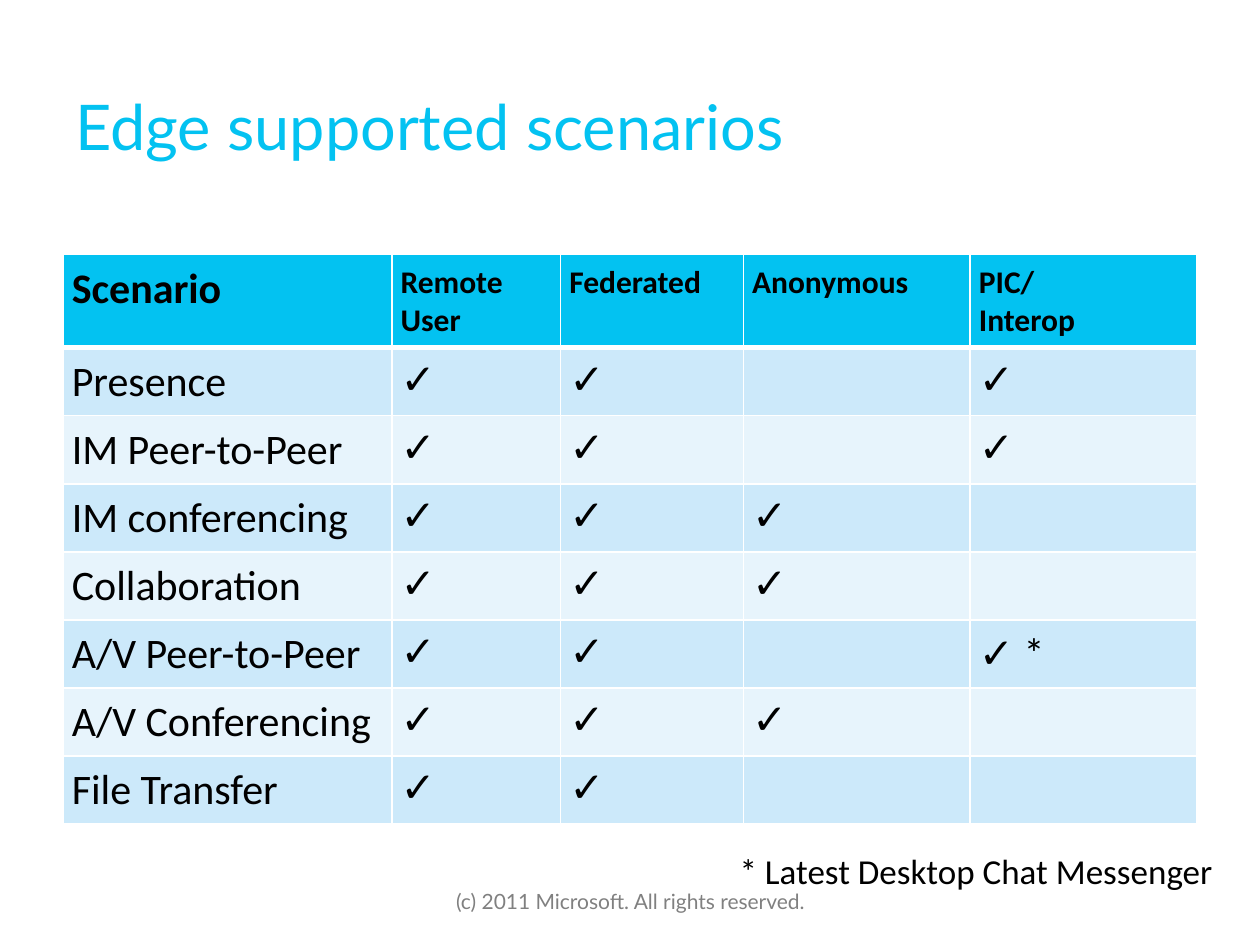
import pptx
import pptx.util
import pptx.dml.color
import pptx.enum.text
import pptx.oxml.ns
import lxml.etree

Inches = pptx.util.Inches
Pt = pptx.util.Pt
RGBColor = pptx.dml.color.RGBColor
Align = pptx.enum.text.PP_ALIGN
Anchor = pptx.enum.text.MSO_ANCHOR
qn = pptx.oxml.ns.qn

CYAN = RGBColor(0x03, 0xC2, 0xF1)
BAND = RGBColor(0xCC, 0xE9, 0xFA)
PALE = RGBColor(0xE7, 0xF4, 0xFC)
WHITE = RGBColor(0xFF, 0xFF, 0xFF)
BLACK = RGBColor(0, 0, 0)
GRAY = RGBColor(0x80, 0x80, 0x80)

HEADS = ["Scenario", "Remote User", "Federated", "Anonymous", "PIC/\vInterop"]
ROWS = [
    ("Presence", "✓", "✓", "", "✓"),
    ("IM Peer-to-Peer", "✓", "✓", "", "✓"),
    ("IM conferencing", "✓", "✓", "✓", ""),
    ("Collaboration", "✓", "✓", "✓", ""),
    ("A/V Peer-to-Peer", "✓", "✓", "", "✓ *"),
    ("A/V Conferencing", "✓", "✓", "✓", ""),
    ("File Transfer", "✓", "✓", "", ""),
]
WIDTHS = [2.61, 1.34, 1.45, 1.8, 1.8]


class Deck:
    def __init__(self):
        self.prs = pptx.Presentation()
        self.prs.slide_width = Inches(10)
        self.prs.slide_height = Inches(7.5)
        self.slide = self.prs.slides.add_slide(self.prs.slide_layouts[6])

    def style(self, run, name, size, color, bold=False):
        form = {"name": name, "size": Pt(size), "bold": bold}
        for key, value in form.items():
            setattr(run.font, key, value)
        run.font.color.rgb = color

    def text(self, words, box, name, size, color, align=Align.LEFT, **frame):
        shape = self.slide.shapes.add_textbox(*map(Inches, box))
        area = shape.text_frame
        form = {"word_wrap": True, "vertical_anchor": Anchor.MIDDLE, **frame}
        for key, value in form.items():
            setattr(area, key, value)
        para = area.paragraphs[0]
        para.alignment = align
        run = para.add_run()
        run.text = words
        self.style(run, name, size, color)

    def border(self, cell, widths):
        props = cell._tc.get_or_add_tcPr()
        for side, width in zip("LRTB", widths):
            line = lxml.etree.SubElement(props, qn(f"a:ln{side}"), w=str(Pt(width)))
            fill = lxml.etree.SubElement(line, qn("a:solidFill"))
            lxml.etree.SubElement(fill, qn("a:srgbClr"), val=str(WHITE))

    def cell(self, cell, words, row, col):
        self.border(cell, (1, 1, 3 if row == 1 else 1, 1 if row else 3))
        cell.fill.solid()
        cell.fill.fore_color.rgb = (BAND if row % 2 else PALE) if row else CYAN
        for side in ("left", "right", "top", "bottom"):
            setattr(cell, f"margin_{side}", Inches(0.07))
        para = cell.text_frame.paragraphs[0]
        if words.startswith("✓"):
            for part, name in (("✓", "Arial"), (words[1:], "Calibri")):
                if part:
                    run = para.add_run()
                    run.text = part
                    self.style(run, name, 24, BLACK)
        elif words:
            para.text = words
            size = 24 if row or not col else 18
            for run in para.runs:
                self.style(run, "Calibri", size, BLACK, row == 0)

    def table(self, data, widths, left, top, head, body):
        tall = head + body * (len(data) - 1)
        box = map(Inches, (left, top, sum(widths), tall))
        grid = self.slide.shapes.add_table(len(data), len(widths), *box).table
        for col, width in zip(grid.columns, widths):
            col.width = Inches(width)
        for row, words in enumerate(data):
            grid.rows[row].height = Inches(body if row else head)
            for col, word in enumerate(words):
                self.cell(grid.cell(row, col), word, row, col)


def main():
    deck = Deck()
    deck.text("Edge supported scenarios", (0.5, 0.37, 9, 1.25), "Lato", 36, CYAN)
    deck.table([HEADS] + ROWS, WIDTHS, 0.5, 2.02, 0.74, 0.54)
    deck.text("(c) 2011 Microsoft. All rights reserved.", (3.42, 6.95, 3.17, 0.4),
              "Lato", 12, GRAY, Align.CENTER)
    flat = {f"margin_{side}": 0 for side in ("left", "right", "top", "bottom")}
    deck.text("* Latest Desktop Chat Messenger", (5.87, 6.74, 3.84, 0.34),
              "Calibri", 20, BLACK, word_wrap=False, vertical_anchor=Anchor.TOP,
              auto_size=pptx.enum.text.MSO_AUTO_SIZE.SHAPE_TO_FIT_TEXT, **flat)
    deck.prs.save("out.pptx")


if __name__ == "__main__":
    main()
